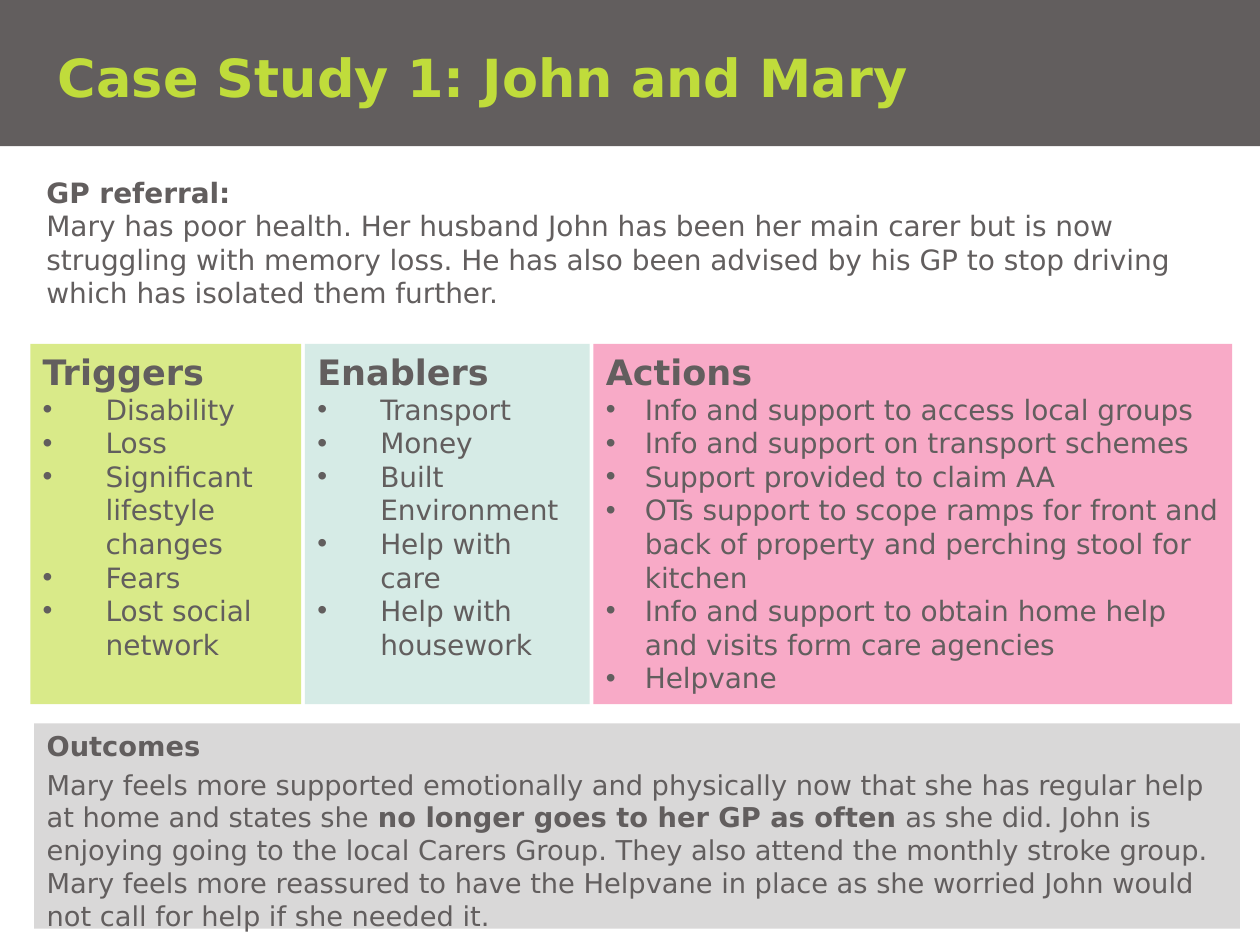
"""Build the case study slide about John and Mary."""
from dataclasses import dataclass

from lxml.etree import SubElement
from pptx import Presentation
from pptx.dml.color import RGBColor
from pptx.enum.shapes import MSO_SHAPE
from pptx.enum.text import MSO_ANCHOR, MSO_AUTO_SIZE, PP_ALIGN
from pptx.oxml.ns import qn
from pptx.util import Inches, Pt

FONT = "DejaVu Sans"
GREY = RGBColor(0x62, 0x5E, 0x5E)
LIME = RGBColor(0xC0, 0xDC, 0x3B)
PALE_LIME = RGBColor(0xD9, 0xEA, 0x89)
PALE_TEAL = RGBColor(0xD6, 0xEB, 0xE6)
PINK = RGBColor(0xF8, 0xAA, 0xC7)
LIGHT_GREY = RGBColor(0xD9, 0xD8, 0xD8)
CARD_TOP, CARD_HEIGHT = 2.73, 2.86


@dataclass
class Card:
    heading: str
    items: list[str]
    left: float
    width: float
    fill: RGBColor
    indent: float = 0.5


CARDS = [
    Card("Triggers",
         ["Disability", "Loss", "Significant lifestyle changes", "Fears",
          "Lost social network"],
         0.24, 2.15, PALE_LIME),
    Card("Enablers",
         ["Transport", "Money", "Built Environment", "Help with care",
          "Help with housework"],
         2.42, 2.26, PALE_TEAL),
    Card("Actions",
         ["Info and support to access local groups",
          "Info and support on transport schemes",
          "Support provided to claim AA",
          "OTs support to scope ramps for front and back of property and "
          "perching stool for kitchen",
          "Info and support to obtain home help and visits form care agencies",
          "Helpvane"],
         4.71, 5.07, PINK, 0.31),
]
REFERRAL = (
    "Mary has poor health. Her husband John has been her main carer but is now "
    "struggling with memory loss. He has also been advised by his GP to stop "
    "driving which has isolated them further."
)
OUTCOME_RUNS = [
    ("Mary feels more supported emotionally and physically now that she has "
     "regular help at home and states she ", False),
    ("no longer goes to her GP as often", True),
    (" as she did. John is enjoying going to the local Carers Group. They also "
     "attend the monthly stroke group. Mary feels more reassured to have the "
     "Helpvane in place as she worried John would not call for help if she "
     "needed it.", False),
]


def add_run(p, text: str, *, size: float = 16, bold: bool = False,
            color: RGBColor = GREY) -> None:
    r = p.add_run()
    r.text = text
    r.font.name = FONT
    r.font.size = Pt(size)
    r.font.bold = bold
    r.font.color.rgb = color


def set_bullet(p, indent: float = 0, char: str = "") -> None:
    p.alignment = PP_ALIGN.LEFT
    pPr = p._p.get_or_add_pPr()
    pPr.set("marL", str(Inches(indent)))
    pPr.set("indent", str(-Inches(indent)))
    if char:
        SubElement(pPr, qn("a:buFont")).set("typeface", "Arial")
        SubElement(pPr, qn("a:buChar")).set("char", char)
    else:
        SubElement(pPr, qn("a:buNone"))


def place(sp, left: float, top: float, width: float, height: float) -> None:
    sp.left, sp.top = Inches(left), Inches(top)
    sp.width, sp.height = Inches(width), Inches(height)


def set_frame(sp, anchor: MSO_ANCHOR = MSO_ANCHOR.TOP):
    tf = sp.text_frame
    tf.word_wrap = True
    tf.auto_size = MSO_AUTO_SIZE.NONE
    tf.vertical_anchor = anchor
    return tf


def add_rect(s, left: float, top: float, width: float, height: float,
             fill: RGBColor):
    sp = s.shapes.add_shape(MSO_SHAPE.RECTANGLE, Inches(left), Inches(top),
                            Inches(width), Inches(height))
    sp.shadow.inherit = False
    sp.fill.solid()
    sp.fill.fore_color.rgb = fill
    sp.line.fill.background()
    return sp


def add_card(s, card: Card) -> None:
    sp = add_rect(s, card.left, CARD_TOP, card.width, CARD_HEIGHT, card.fill)
    tf = set_frame(sp)
    p = tf.paragraphs[0]
    p.alignment = PP_ALIGN.LEFT
    add_run(p, card.heading, size=20, bold=True)
    for item in card.items:
        p = tf.add_paragraph()
        set_bullet(p, card.indent, "•")
        add_run(p, item)


def add_title(s) -> None:
    title = s.shapes.title
    band = add_rect(s, 0, 0, 10, 1.16, GREY)
    title.element.addprevious(band.element)
    place(title, 0.36, 0.06, 7.74, 1.1)
    p = set_frame(title, MSO_ANCHOR.MIDDLE).paragraphs[0]
    p.alignment = PP_ALIGN.LEFT
    add_run(p, "Case Study 1: John and Mary", size=30, bold=True, color=LIME)


def add_referral(s) -> None:
    sp = s.shapes.add_textbox(Inches(0.27), Inches(1.34), Inches(9.48), Inches(1.41))
    tf = set_frame(sp)
    add_run(tf.paragraphs[0], "GP referral:", bold=True)
    add_run(tf.add_paragraph(), REFERRAL)


def add_outcomes(s) -> None:
    body = s.placeholders[1]
    place(body, 0.27, 5.74, 9.57, 1.63)
    body.fill.solid()
    body.fill.fore_color.rgb = LIGHT_GREY
    tf = set_frame(body)
    p = tf.paragraphs[0]
    set_bullet(p)
    add_run(p, "Outcomes", size=15.6, bold=True)
    p = tf.add_paragraph()
    set_bullet(p)
    for text, bold in OUTCOME_RUNS:
        add_run(p, text, size=15.6, bold=bold)


def main() -> None:
    prs = Presentation()
    prs.slide_width, prs.slide_height = Inches(10), Inches(7.5)
    s = prs.slides.add_slide(prs.slide_layouts[1])
    add_title(s)
    add_referral(s)
    for card in CARDS:
        add_card(s, card)
    add_outcomes(s)
    prs.save("out.pptx")


if __name__ == "__main__":
    main()
